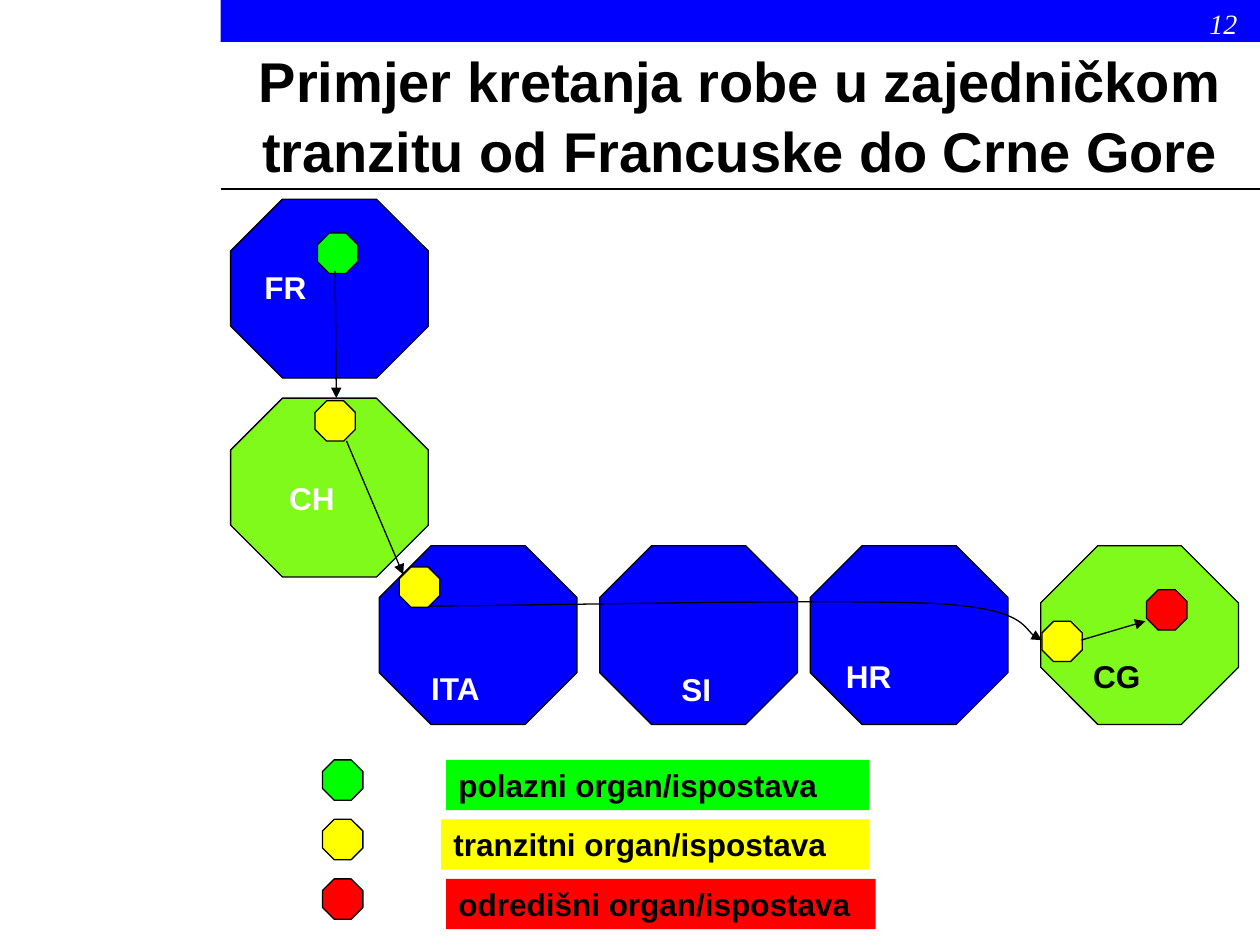
from dataclasses import dataclass

from lxml.etree import SubElement
from pptx import Presentation
from pptx.dml.color import RGBColor
from pptx.enum.shapes import MSO_CONNECTOR as Connector, MSO_SHAPE as Shape
from pptx.enum.text import PP_ALIGN as Align
from pptx.oxml.ns import qn
from pptx.util import Pt

BLUE, LIME, GREEN = "0000FF", "7FFA1A", "00FF00"
YELLOW, RED, BLACK, WHITE = "FFFF00", "FF0000", "000000", "FFFFFF"


def color(value):
    return RGBColor.from_string(value)


@dataclass
class TransitPage:
    """Draws the elements of the transit diagram on one page, in points."""

    page: object
    font: str = "Arial"
    size: float = 18
    stroke: float = 0.75
    office: float = 23.04

    def shape(self, kind, left, top, width, height, fill, outlined=False):
        shape = self.page.shapes.add_shape(
            kind, Pt(left), Pt(top), Pt(width), Pt(height))
        shape.shadow.inherit = False
        shape.fill.solid()
        shape.fill.fore_color.rgb = color(fill)
        if outlined:
            self.outline(shape)
        else:
            shape.line.fill.background()
        return shape

    def octagon(self, left, top, width, height, fill, corner=0.29):
        shape = self.shape(Shape.OCTAGON, left, top, width, height, fill, True)
        shape.adjustments[0] = corner

    def country(self, left, top, fill, corner=0.29):
        self.octagon(left, top, 113, 102.2, fill, corner)

    def customs_office(self, left, top, fill):
        self.octagon(left, top, self.office, self.office, fill)

    def text(self, words, left, top, width, height=28.8, ink=BLACK, fill=None,
             align=Align.LEFT, size=None, font=None, bold=True, italic=False,
             spacing=1.0):
        box = self.page.shapes.add_textbox(
            Pt(left), Pt(top), Pt(width), Pt(height))
        if fill:
            box.fill.solid()
            box.fill.fore_color.rgb = color(fill)
        box.text_frame.word_wrap = True
        para = box.text_frame.paragraphs[0]
        para.alignment = align
        para.line_spacing = spacing
        span = para.add_run()
        span.text = words
        span.font.name = font or self.font
        span.font.size = Pt(size or self.size)
        span.font.bold = bold
        span.font.italic = italic
        span.font.color.rgb = color(ink)

    def outline(self, shape, arrow=False):
        shape.line.color.rgb = color(BLACK)
        shape.line.width = Pt(self.stroke)
        if arrow:
            line = shape.line._get_or_add_ln()
            SubElement(line, qn("a:tailEnd"), type="triangle")

    def line(self, start, end, arrow=True):
        line = self.page.shapes.add_connector(
            Connector.STRAIGHT, *map(Pt, start + end))
        self.outline(line, arrow)
        SubElement(line._element.spPr, qn("a:effectLst"))

    def curve(self, start, *segments, steps=24):
        points, origin = [], start
        for first, second, end in segments:
            for step in range(1, steps + 1):
                t = step / steps
                u = 1 - t
                points.append(tuple(
                    Pt(u**3 * a + 3 * u * u * t * b + 3 * u * t * t * c + t**3 * d)
                    for a, b, c, d in zip(origin, first, second, end)))
            origin = end
        builder = self.page.shapes.build_freeform(*map(Pt, start))
        builder.add_line_segments(points, close=False)
        shape = builder.convert_to_shape()
        shape.shadow.inherit = False
        shape.fill.background()
        self.outline(shape, arrow=True)


def main():
    deck = Presentation()
    deck.slide_width, deck.slide_height = Pt(720), Pt(540)
    draw = TransitPage(deck.slides.add_slide(deck.slide_layouts[6]))

    for left, top in ((342.7, 311.8), (131.8, 113.8), (216.7, 311.8), (463, 311.8)):
        draw.country(left, top, BLUE)
    draw.country(131.8, 227.5, LIME)
    draw.country(594.7, 311.8, LIME, corner=0.32)

    draw.shape(Shape.RECTANGLE, 126, 0, 594, 24, BLUE)
    draw.text("Primjer kretanja robe u zajedničkom tranzitu od Francuske do Crne Gore",
              126, 21.6, 594, 85, align=Align.CENTER, size=32, spacing=1.04)
    draw.line((126, 108), (720, 108), arrow=False)
    draw.text("12", 684, 0, 36, 26.6, ink=WHITE, size=16,
              font="Times New Roman", bold=False, italic=True)

    draw.customs_office(181.4, 133.2, GREEN)
    draw.line((191.5, 154.8), (192.2, 227.5))
    draw.curve((245.5, 346.3),
               ((293.8, 346.3), (476.6, 342), (535, 344.9)),
               ((593.3, 348.5), (582.5, 361.4), (595.4, 365.8)))
    for left, top, fill in ((228.2, 324, YELLOW), (595.4, 355, YELLOW),
                            (655.2, 337, RED), (180, 229, YELLOW)):
        draw.customs_office(left, top, fill)
    draw.line((617.8, 365.8), (654.5, 355))
    draw.line((198, 252), (230.4, 328.3))

    draw.text("FR", 144, 149.8, 40, ink=WHITE)
    for name, left, top, ink in (("CH", 144, 270, WHITE),
                                 ("ITA", 226, 378.7, WHITE),
                                 ("SI", 363.6, 379.4, WHITE),
                                 ("HR", 462.2, 372.2, WHITE),
                                 ("CG", 604, 372.2, BLACK)):
        draw.text(name, left, top, 68.4, ink=ink, align=Align.CENTER)

    legend = (("polazni organ/ispostava", 254.9, 241.9, GREEN),
              ("tranzitni organ/ispostava", 252, 244.8, YELLOW),
              ("odredišni organ/ispostava", 254.9, 245.5, RED))
    for row, (label, left, width, fill) in enumerate(legend):
        top = 434.2 + 34 * row
        draw.customs_office(184.3, top, fill)
        draw.text(label, left, top, width, fill=fill)

    deck.save("out.pptx")


if __name__ == "__main__":
    main()
